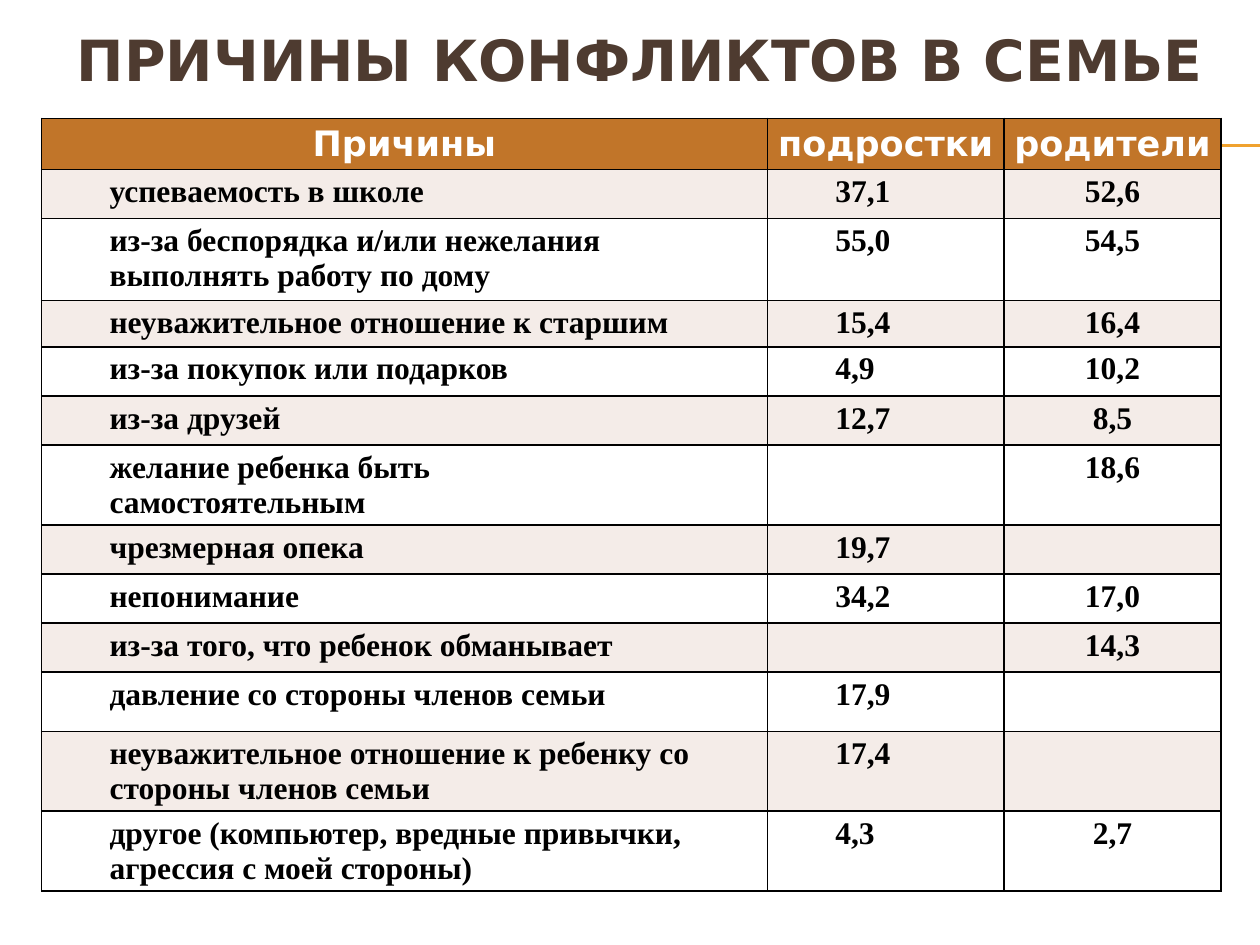
from lxml import etree
from pptx import Presentation
from pptx.dml.color import RGBColor
from pptx.enum import shapes, text
from pptx.oxml import ns
from pptx.util import Inches, Pt

HUES = {"title": "4E3B30", "rule": "F0A22E", "head": "C17529", "band": "F4ECE8",
        "plain": "FFFFFF", "ink": "000000"}
SANS, SERIF = "DejaVu Sans", "Times New Roman"
LEFT, MID = text.PP_ALIGN.LEFT, text.PP_ALIGN.CENTER
JUST = text.PP_ALIGN.JUSTIFY

HEADS = ("Причины", "подростки", "родители")
# reason, teenagers, parents, row height
ROWS = [
    ("успеваемость в школе", "37,1", "52,6", 0.39),
    ("из-за беспорядка и/или нежелания выполнять работу по дому", "55,0", "54,5", 0.65),
    ("неуважительное отношение к старшим", "15,4", "16,4", 0.37),
    ("из-за покупок или подарков", "4,9", "10,2", 0.39),
    ("из-за друзей", "12,7", "8,5", 0.39),
    ("желание ребенка быть\nсамостоятельным", "", "18,6", 0.63),
    ("чрезмерная опека", "19,7", "", 0.39),
    ("непонимание", "34,2", "17,0", 0.39),
    ("из-за того, что ребенок обманывает", "", "14,3", 0.39),
    ("давление со стороны членов семьи", "17,9", "", 0.47),
    ("неуважительное отношение к ребенку со стороны членов семьи", "17,4", "", 0.63),
    ("другое (компьютер, вредные привычки, агрессия с моей стороны)", "4,3", "2,7", 0.63),
]


def color(name):
    return RGBColor.from_string(HUES[name])


class Deck:
    def __init__(self):
        self.prs = Presentation()
        self.prs.slide_width, self.prs.slide_height = Inches(10), Inches(7.5)
        self.slide = self.prs.slides.add_slide(self.prs.slide_layouts[5])

    def label(self, frame, words, size, font, hue, align, indent=0):
        """Fill a text frame, one paragraph for each line of words."""
        for i, line in enumerate(words.split("\n")):
            para = frame.add_paragraph() if i else frame.paragraphs[0]
            para.alignment = align
            if indent:
                props = para._p.get_or_add_pPr()
                props.set("marL", str(Inches(indent)))
                props.set("indent", "0")
            run = para.add_run()
            run.text = line
            run.font.size, run.font.name, run.font.bold = Pt(size), font, True
            run.font.color.rgb = color(hue)

    def title(self, words, x, y, w, h):
        box = self.slide.shapes.title
        box.left, box.top, box.width, box.height = map(Inches, (x, y, w, h))
        box.text_frame.vertical_anchor = text.MSO_ANCHOR.MIDDLE
        self.label(box.text_frame, words, 32.4, SANS, "title", MID)

    def rule(self, x, y, end):
        line = self.slide.shapes.add_connector(
            shapes.MSO_CONNECTOR.STRAIGHT, Inches(x), Inches(y), Inches(end), Inches(y))
        line.line.color.rgb, line.line.width = color("rule"), Pt(0.75)
        etree.SubElement(line._element.spPr, ns.qn("a:effectLst"))

    def cell(self, cell, fill, words, *style):
        cell.margin_left = cell.margin_right = Inches(0.04)
        cell.margin_top = cell.margin_bottom = Inches(0.04)
        props = cell._tc.get_or_add_tcPr()
        for side in ("lnL", "lnR", "lnT", "lnB"):
            edge = etree.SubElement(props, ns.qn("a:" + side), w=str(Pt(1)))
            solid = etree.SubElement(edge, ns.qn("a:solidFill"))
            etree.SubElement(solid, ns.qn("a:srgbClr"), val=HUES["ink"])
        cell.fill.solid()
        cell.fill.fore_color.rgb = color(fill)
        if words:
            self.label(cell.text_frame, words, *style)

    def table(self, x, y, widths, head, heads, rows):
        """Draw a header of height head, then rows that end in their height."""
        highs = [head] + [row[-1] for row in rows]
        grid = self.slide.shapes.add_table(
            len(highs), len(widths), Inches(x), Inches(y),
            Inches(sum(widths)), Inches(sum(highs))).table
        for col, width in zip(grid.columns, widths):
            col.width = Inches(width)
        for row, high in zip(grid.rows, highs):
            row.height = Inches(high)
        for c, words in enumerate(heads):
            self.cell(grid.cell(0, c), "head", words, 20, SANS, "plain", MID)
        looks = ((LEFT, 0.5), (JUST, 0.5), (MID, 0))
        for r, row in enumerate(rows, 1):
            fill = "band" if r % 2 else "plain"
            for c, (words, look) in enumerate(zip(row, looks)):
                self.cell(grid.cell(r, c), fill, words, 18, SERIF, "ink", *look)


def main():
    deck = Deck()
    for y in (1.15, 1.16):
        deck.rule(0.56, y, 10)
    deck.title("ПРИЧИНЫ КОНФЛИКТОВ В СЕМЬЕ", 0.33, 0, 9.5, 0.94)
    deck.table(0.33, 0.94, (5.76, 1.88, 1.72), 0.4, HEADS, ROWS)
    deck.prs.save("out.pptx")


if __name__ == "__main__":
    main()
